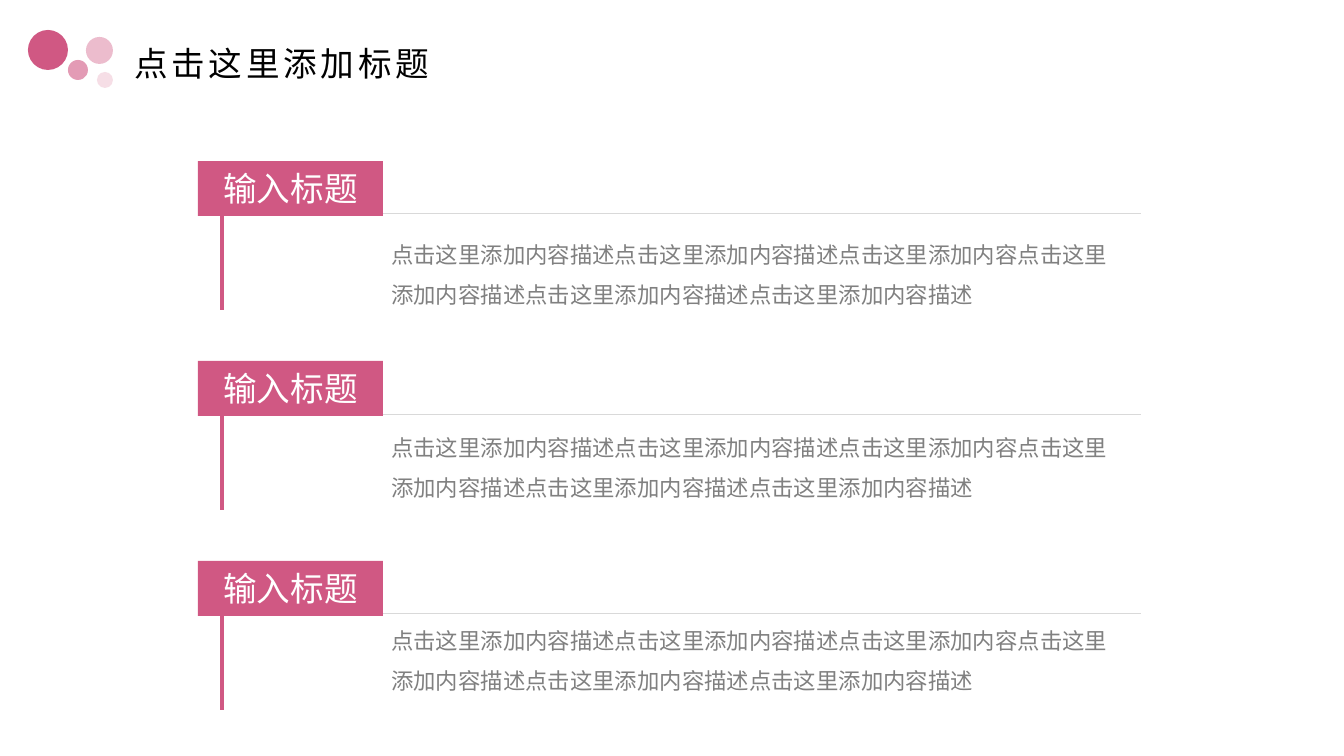
from lxml.etree import SubElement
from pptx import Presentation
from pptx.dml.color import RGBColor
from pptx.enum.shapes import MSO_CONNECTOR, MSO_SHAPE
from pptx.enum.text import MSO_ANCHOR, PP_ALIGN
from pptx.oxml.ns import qn
from pptx.util import Pt

PX = 914400 / 134.4
COLORS = {
    "pink": "D05883", "pink_mid": "E39BB5", "pink_soft": "ECBCCD",
    "pink_pale": "F6DEE6", "rule": "D9D9D9", "body": "808080",
    "title": "000000", "white": "FFFFFF",
}
CJK_FONT = "Noto Sans CJK SC"
DOTS = [  # left, top, diameter, colour
    (28, 30, 40, "pink"), (68, 60, 20, "pink_mid"),
    (86, 37, 27, "pink_soft"), (97, 72, 16, "pink_pale"),
]
BODY = ("点击这里添加内容描述点击这里添加内容描述点击这里添加内容"
        "点击这里添加内容描述点击这里添加内容描述点击这里添加内容描述")
SECTIONS = [("输入标题", BODY)] * 3
SECTION_STEP = 200
BODY_STEP = 193


def px(*values):
    return [round(v * PX) for v in values]


def rgb(name):
    return RGBColor.from_string(COLORS[name])


def write(shape, text, size, color, font="Calibri", spacing=None):
    """Put one paragraph in the shape and return that paragraph."""
    tf = shape.text_frame
    tf.word_wrap = True
    tf.text = text
    p = tf.paragraphs[0]
    r = p.runs[0]
    r.font.size = Pt(size)
    r.font.name = font
    r.font.color.rgb = rgb(color)
    rPr = r.font._element
    SubElement(rPr, qn("a:ea")).set("typeface", CJK_FONT)
    if spacing:
        rPr.set("spc", str(spacing * 100))
    return p


def add_filled(s, kind, box, color):
    sp = s.shapes.add_shape(kind, *px(*box))
    sp.shadow.inherit = False
    sp.fill.solid()
    sp.fill.fore_color.rgb = rgb(color)
    sp.line.fill.background()
    return sp


def add_line(s, ends, color, width):
    line = s.shapes.add_connector(MSO_CONNECTOR.STRAIGHT, *px(*ends))
    line.line.color.rgb = rgb(color)
    line.line.width = Pt(width)
    SubElement(line._element.spPr, qn("a:effectLst"))


def add_title(s, text):
    sp = s.shapes.add_textbox(*px(121, 26, 1159, 79))
    sp.text_frame.vertical_anchor = MSO_ANCHOR.MIDDLE
    p = write(sp, text, 18, "title", CJK_FONT, spacing=2)
    p.line_spacing = 0.9


def add_heading(s, text, top):
    """Add the tag with its horizontal rule and vertical stem."""
    add_line(s, (379, top + 53, 1141, top + 53), "rule", 0.5)
    tag = add_filled(s, MSO_SHAPE.ROUNDED_RECTANGLE, (198, top, 185, 55), "pink")
    tag.adjustments[0] = 0
    tag.text_frame.vertical_anchor = MSO_ANCHOR.MIDDLE
    write(tag, text, 18, "white").alignment = PP_ALIGN.CENTER
    add_line(s, (222, top + 30, 222, top + 149), "pink", 2.25)


def add_body(s, text, top):
    sp = s.shapes.add_textbox(*px(378, top, 763, 111))
    write(sp, text, 12, "body").line_spacing = 1.5


def main():
    prs = Presentation()
    prs.slide_width, prs.slide_height = px(1344, 756)
    s = prs.slides.add_slide(prs.slide_layouts[6])
    for left, top, size, color in DOTS:
        add_filled(s, MSO_SHAPE.OVAL, (left, top, size, size), color)
    add_title(s, "点击这里添加标题")
    for i, (heading, body) in enumerate(SECTIONS):
        add_heading(s, heading, 161 + i * SECTION_STEP)
        add_body(s, body, 221 + i * BODY_STEP)
    prs.save("out.pptx")


if __name__ == "__main__":
    main()
